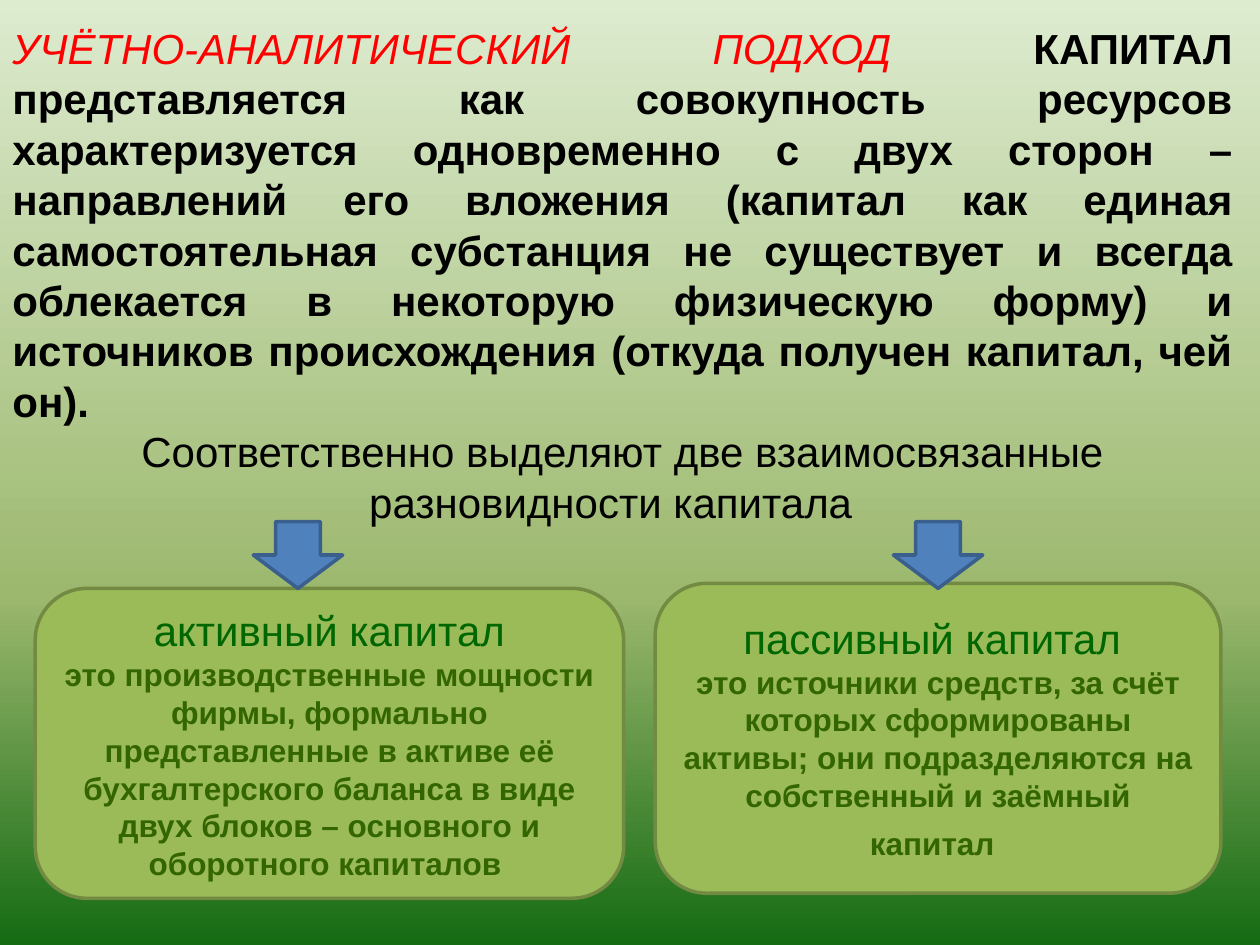
from copy import deepcopy

from pptx import Presentation
from pptx.dml.color import RGBColor
from pptx.enum.shapes import MSO_SHAPE
from pptx.enum.text import MSO_ANCHOR, MSO_AUTO_SIZE, PP_ALIGN
from pptx.oxml.ns import qn
from pptx.util import Inches, Pt

ROUND_RECT, DOWN_ARROW = MSO_SHAPE.ROUNDED_RECTANGLE, MSO_SHAPE.DOWN_ARROW
CENTER, JUSTIFY = PP_ALIGN.CENTER, PP_ALIGN.JUSTIFY
TOP, MIDDLE = MSO_ANCHOR.TOP, MSO_ANCHOR.MIDDLE

THEME = {
    "font": "Arial",
    "line": 2,
    "background": [(0, "DDEBCF"), (0.63, "9CB86E"), (1, "156B13")],
    "card": ("9BBB59", "738A42"),
    "arrow": ("4F81BD", "3A5F8C"),
    "styles": {
        "approach": (24, "FF0000", False, True),
        "definition": (24, "000000", True, False),
        "lead": (24, "000000", False, False),
        "term": (24, "006600", False, False),
        "meaning": (18, "336600", True, False),
    },
}

INTRO_BOX = (0, 0.13, 9.88, 4.54)
INTRO = [
    (JUSTIFY, [
        ("approach", "УЧЁТНО-АНАЛИТИЧЕСКИЙ ПОДХОД "),
        ("definition", "КАПИТАЛ представляется как совокупность ресурсов "
         "характеризуется одновременно с двух сторон – направлений его вложения "
         "(капитал как единая самостоятельная субстанция не существует и всегда "
         "облекается в некоторую физическую форму) и источников происхождения "
         "(откуда получен капитал, чей он). "),
    ]),
    (CENTER, [("lead", "Соответственно выделяют две взаимосвязанные разновидности капитала  ")]),
]

CARDS = [
    ((0.28, 4.67, 4.67, 2.46), [
        (CENTER, [("term", "активный капитал")]),
        (CENTER, [("meaning", "это производственные мощности фирмы, формально "
                   "представленные в активе её бухгалтерского баланса в виде двух "
                   "блоков – основного и оборотного капиталов ")]),
    ]),
    ((5.2, 4.63, 4.49, 2.46), [
        (CENTER, [("term", "пассивный капитал ")]),
        (CENTER, [("meaning", "это источники средств, за счёт которых сформированы "
                   "активы; они подразделяются на собственный и заёмный капитал"),
                  ("term", " ")]),
    ]),
]

ARROW_LEFTS = (2.01, 7.09)
ARROW_TOP, ARROW_W, ARROW_H = 4.14, 0.71, 0.53


def paint_background(s):
    fill = s.background.fill
    fill.gradient()
    fill.gradient_angle = 270
    stops = s._element.find(".//" + qn("a:gsLst"))
    stops.append(deepcopy(stops[-1]))
    for stop, (position, color) in zip(fill.gradient_stops, THEME["background"]):
        stop.position = position
        stop.color.rgb = RGBColor.from_string(color)


def write(tf, paragraphs, anchor):
    tf.word_wrap = True
    tf.vertical_anchor = anchor
    for i, (align, runs) in enumerate(paragraphs):
        p = tf.add_paragraph() if i else tf.paragraphs[0]
        p.alignment = align
        for style, text in runs:
            size, color, bold, italic = THEME["styles"][style]
            r = p.add_run()
            r.text = text
            r.font.name = THEME["font"]
            r.font.size = Pt(size)
            r.font.bold = bold
            r.font.italic = italic
            r.font.color.rgb = RGBColor.from_string(color)


def add_figure(s, kind, box, colors):
    sp = s.shapes.add_shape(kind, *map(Inches, box))
    sp.shadow.inherit = False
    fill, line = map(RGBColor.from_string, colors)
    sp.fill.solid()
    sp.fill.fore_color.rgb = fill
    sp.line.color.rgb = line
    sp.line.width = Pt(THEME["line"])
    return sp


def main():
    prs = Presentation()
    prs.slide_width, prs.slide_height = Inches(10), Inches(7.5)
    s = prs.slides.add_slide(prs.slide_layouts[6])
    paint_background(s)

    tf = s.shapes.add_textbox(*map(Inches, INTRO_BOX)).text_frame
    write(tf, INTRO, TOP)
    tf.auto_size = MSO_AUTO_SIZE.SHAPE_TO_FIT_TEXT

    for box, paragraphs in CARDS:
        sp = add_figure(s, ROUND_RECT, box, THEME["card"])
        write(sp.text_frame, paragraphs, MIDDLE)

    for left in ARROW_LEFTS:
        add_figure(s, DOWN_ARROW, (left, ARROW_TOP, ARROW_W, ARROW_H), THEME["arrow"])

    prs.save("out.pptx")


if __name__ == "__main__":
    main()
